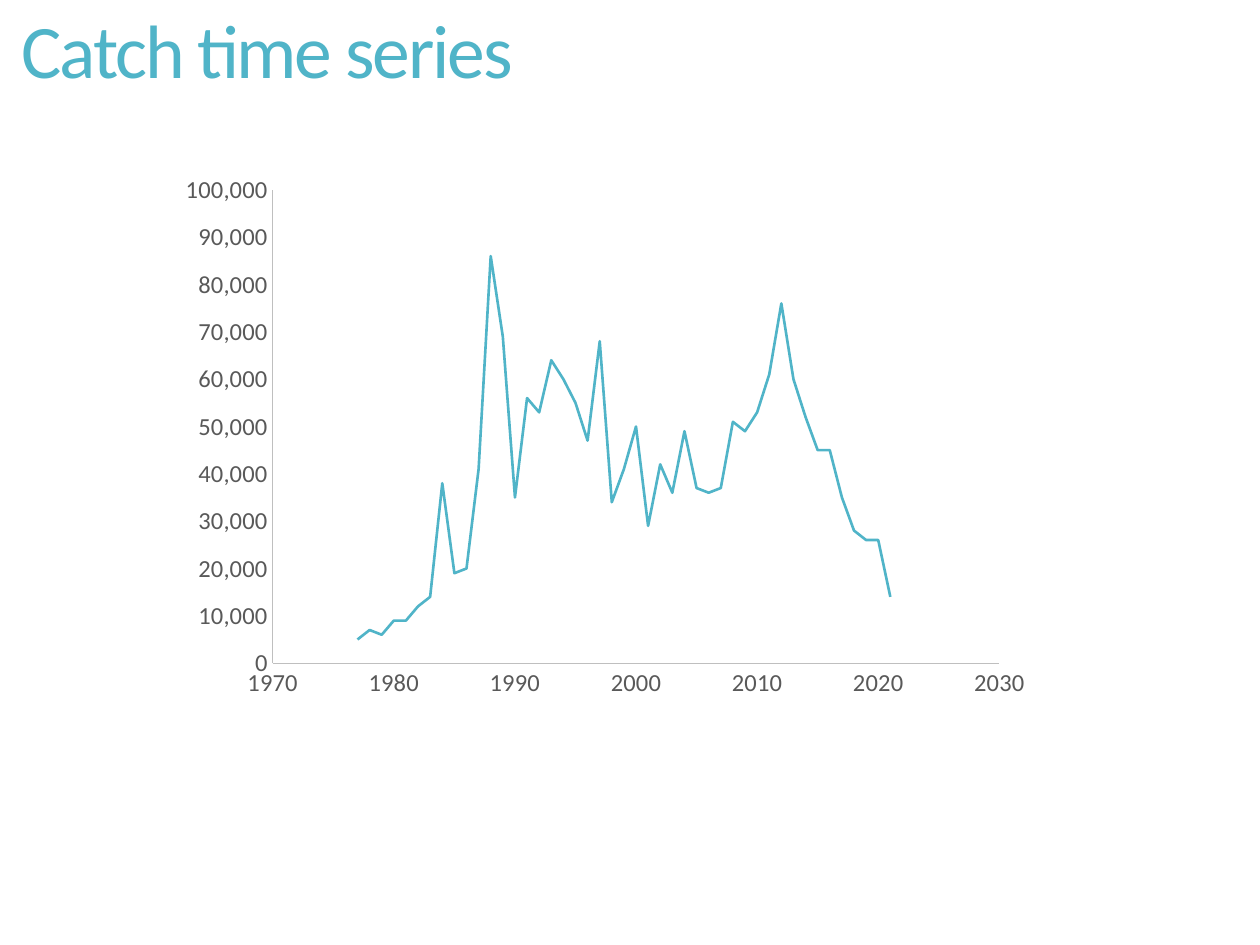
from lxml import etree
from pptx import Presentation
from pptx import util as u
from pptx.chart.data import XyChartData
from pptx.dml.color import RGBColor
from pptx.enum import chart as ch, text
from pptx.oxml.ns import qn

COLORS = {"accent": "50B4C8", "label": "595959", "axis": "BFBFBF"}
FONT = "Calibri"
FIRST_YEAR = 1977
CATCH_THOUSANDS = [
    5, 7, 6, 9, 9, 12, 14, 38, 19, 20, 41, 86, 69, 35, 56,
    53, 64, 60, 55, 47, 68, 34, 41, 50, 29, 42, 36, 49, 37, 36,
    37, 51, 49, 53, 61, 76, 60, 52, 45, 45, 35, 28, 26, 26, 14,
]


def rgb(name):
    return RGBColor.from_string(COLORS[name])


def style_font(font, size, color):
    font.name = FONT
    font.size = u.Pt(size)
    font.color.rgb = rgb(color)


def write_text(tf, words, size, color, spacing=0, line_spacing=1.0):
    tf.word_wrap = True
    tf.auto_size = text.MSO_AUTO_SIZE.NONE
    tf.vertical_anchor = text.MSO_ANCHOR.MIDDLE
    p = tf.paragraphs[0]
    p.alignment = text.PP_ALIGN.LEFT
    p.line_spacing = line_spacing
    r = p.add_run()
    r.text = words
    style_font(r.font, size, color)
    r.font._element.set("spc", str(round(spacing * 100)))


def add_title(s, words):
    sp = s.shapes.title
    sp.left, sp.top, sp.width, sp.height = map(u.Cm, (0.18, 0.28, 22.45, 1.6))
    write_text(sp.text_frame, words, 43.2, "accent", spacing=-1.2, line_spacing=0.9)


def style_axis(axis, low, high, step, number_format):
    axis.minimum_scale, axis.maximum_scale, axis.major_unit = low, high, step
    axis.has_major_gridlines = False
    axis.has_title = False
    axis.major_tick_mark = axis.minor_tick_mark = ch.XL_TICK_MARK.NONE
    axis.tick_labels.number_format = number_format
    axis.tick_labels.number_format_is_linked = False
    style_font(axis.tick_labels.font, 14, "label")
    axis.format.line.color.rgb = rgb("axis")
    axis.format.line.width = u.Pt(0.75)


def place_plot(chart, **fractions):
    plot_area = chart._chartSpace.find(".//" + qn("c:plotArea"))
    for old in plot_area.findall(qn("c:layout")):
        plot_area.remove(old)
    layout = etree.Element(qn("c:layout"))
    manual = etree.SubElement(layout, qn("c:manualLayout"))
    settings = {"layoutTarget": "inner", "xMode": "edge", "yMode": "edge", **fractions}
    for tag, val in settings.items():
        etree.SubElement(manual, qn("c:" + tag)).set("val", str(val))
    plot_area.insert(0, layout)


def add_catch_chart(s):
    data = XyChartData()
    catch = data.add_series("Series 1")
    for year, thousands in enumerate(CATCH_THOUSANDS, FIRST_YEAR):
        catch.add_data_point(year, thousands * 1000)
    chart = s.shapes.add_chart(
        ch.XL_CHART_TYPE.XY_SCATTER_LINES_NO_MARKERS,
        u.Cm(3.38), u.Cm(3.28), u.Cm(17.65), u.Cm(10.97), data,
    ).chart
    chart.has_title = False
    chart.has_legend = False
    chart.font.name = FONT
    chart.font.size = u.Pt(10)
    style_axis(chart.category_axis, 1970, 2030, 10, "General")
    style_axis(chart.value_axis, 0, 100000, 10000, "#,##0")
    place_plot(chart, x=0.12, y=0.05, w=0.83, h=0.87)
    plot = chart.plots[0]
    plot.vary_by_categories = False
    series = plot.series[0]
    series.smooth = False
    series.marker.style = ch.XL_MARKER_STYLE.NONE
    series.format.line.color.rgb = rgb("accent")
    series.format.line.width = u.Pt(1.5)


def main():
    prs = Presentation()
    prs.slide_width, prs.slide_height = u.Cm(25.4), u.Cm(19.05)
    s = prs.slides.add_slide(prs.slide_layouts[5])
    add_title(s, "Catch time series")
    add_catch_chart(s)
    prs.save("out.pptx")


if __name__ == "__main__":
    main()
